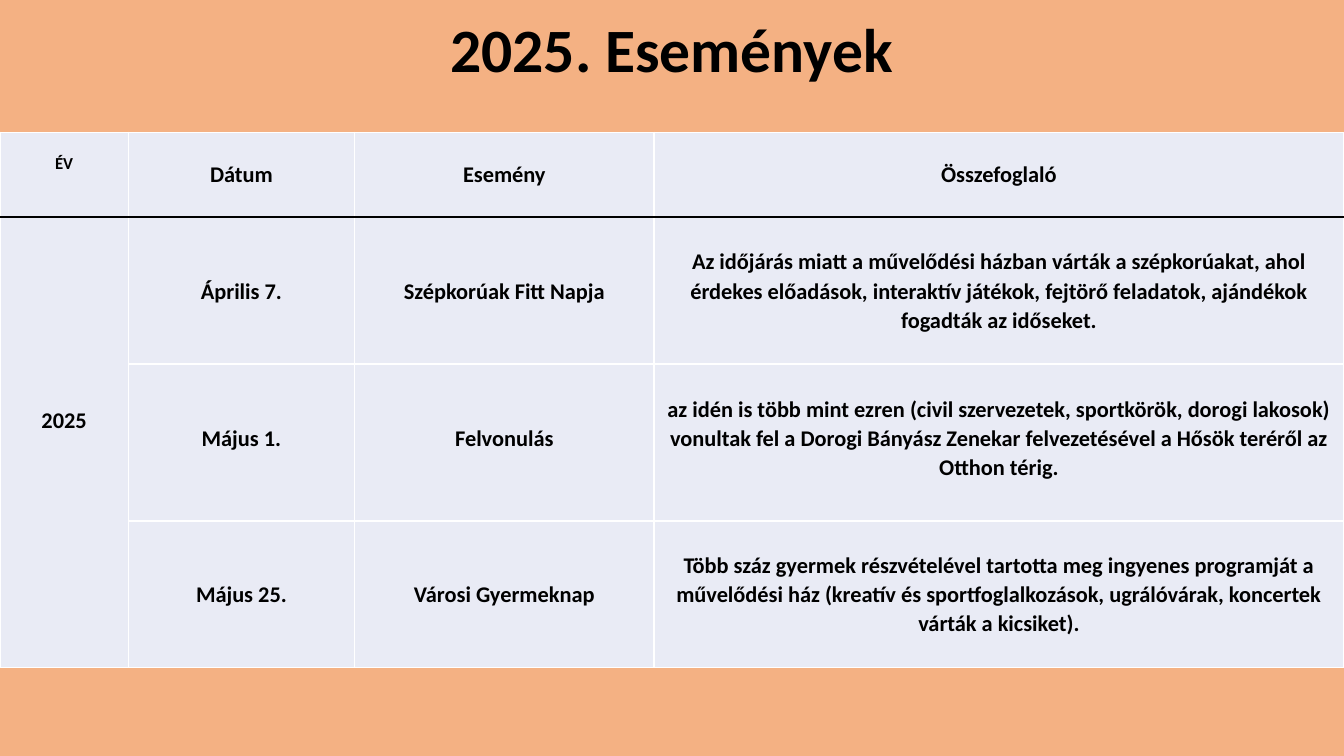
from lxml.etree import SubElement
from pptx import Presentation
from pptx.dml.color import RGBColor
from pptx.enum.text import MSO_ANCHOR, PP_ALIGN
from pptx.oxml.ns import qn
from pptx.util import Cm, Pt

COLORS = {"back": "F4B183", "cell": "E9EBF5", "line": "FFFFFF", "text": "000000"}


def write(frame, text, size, spacing):
    """Put one centred bold run into the frame."""
    para = frame.paragraphs[0]
    para.alignment = PP_ALIGN.CENTER
    para.line_spacing = spacing
    run = para.add_run()
    run.text = text
    run.font.name = "Calibri"
    run.font.size = Pt(size)
    run.font.bold = True
    run.font.color.rgb = RGBColor.from_string(COLORS["text"])


def edge(cell, side, color):
    """Draw a 1 pt border on one side; call before the cell is filled."""
    line = SubElement(cell._tc.get_or_add_tcPr(), qn(f"a:ln{side}"), w=str(Pt(1)))
    fill = SubElement(line, qn("a:solidFill"))
    SubElement(fill, qn("a:srgbClr"), val=color)


prs = Presentation()
prs.slide_width, prs.slide_height = Cm(33.87), Cm(19.05)
slide = prs.slides.add_slide(prs.slide_layouts[5])
slide.background.fill.solid()
slide.background.fill.fore_color.rgb = RGBColor.from_string(COLORS["back"])

title = slide.shapes.title
title.left, title.top = Cm(2.33), Cm(-0.51)
title.width, title.height = Cm(29.21), Cm(3.68)
title.text_frame.vertical_anchor = MSO_ANCHOR.MIDDLE
write(title.text_frame, "2025. Események", 44, 0.9)

rows = [
    ("ÉV", "Dátum", "Esemény", "Összefoglaló"),
    ("2025", "Április 7.", "Szépkorúak Fitt Napja",
     "Az időjárás miatt a művelődési házban várták a szépkorúakat, ahol "
     "érdekes előadások, interaktív játékok, fejtörő feladatok, ajándékok "
     "fogadták az időseket."),
    ("", "Május 1.", "Felvonulás",
     "az idén is több mint ezren (civil szervezetek, sportkörök, dorogi "
     "lakosok) vonultak fel a Dorogi Bányász Zenekar felvezetésével a Hősök "
     "teréről az Otthon térig."),
    ("", "Május 25.", "Városi Gyermeknap",
     "Több száz gyermek részvételével tartotta meg ingyenes programját a "
     "művelődési ház (kreatív és sportfoglalkozások, ugrálóvárak, koncertek "
     "várták a kicsiket)."),
]
widths = [3.23, 5.71, 7.54, 17.39]
heights = [2.14, 3.7, 3.96, 3.68]
# Bottom margins that lift the text above the middle of its cell
lifts = {(0, 0): 0.55, (1, 0): 1.07, (2, 1): 0.23, (2, 2): 0.23, (2, 3): 0.23}

table = slide.shapes.add_table(
    len(rows), len(widths), 0, Cm(3.33), Cm(sum(widths)), Cm(sum(heights))).table
table.first_row = table.horz_banding = False
for col, width in zip(table.columns, widths):
    col.width = Cm(width)
for row, height in zip(table.rows, heights):
    row.height = Cm(height)
table.cell(1, 0).merge(table.cell(3, 0))

for r, row in enumerate(rows):
    for c, text in enumerate(row):
        cell = table.cell(r, c)
        for side in "LRTB":
            dark = (r, side) in [(0, "B"), (1, "T")]
            edge(cell, side, COLORS["text" if dark else "line"])
        cell.fill.solid()
        cell.fill.fore_color.rgb = RGBColor.from_string(COLORS["cell"])
        cell.vertical_anchor = MSO_ANCHOR.MIDDLE
        cell.margin_left = cell.margin_right = Cm(0.18 if r else 0.1)
        cell.margin_top = 0
        cell.margin_bottom = Cm(lifts.get((r, c), 0))
        if text:
            write(cell.text_frame, text, 12 if r == c == 0 else 16,
                  1.07 if r and c else 1.0)

prs.save("out.pptx")
